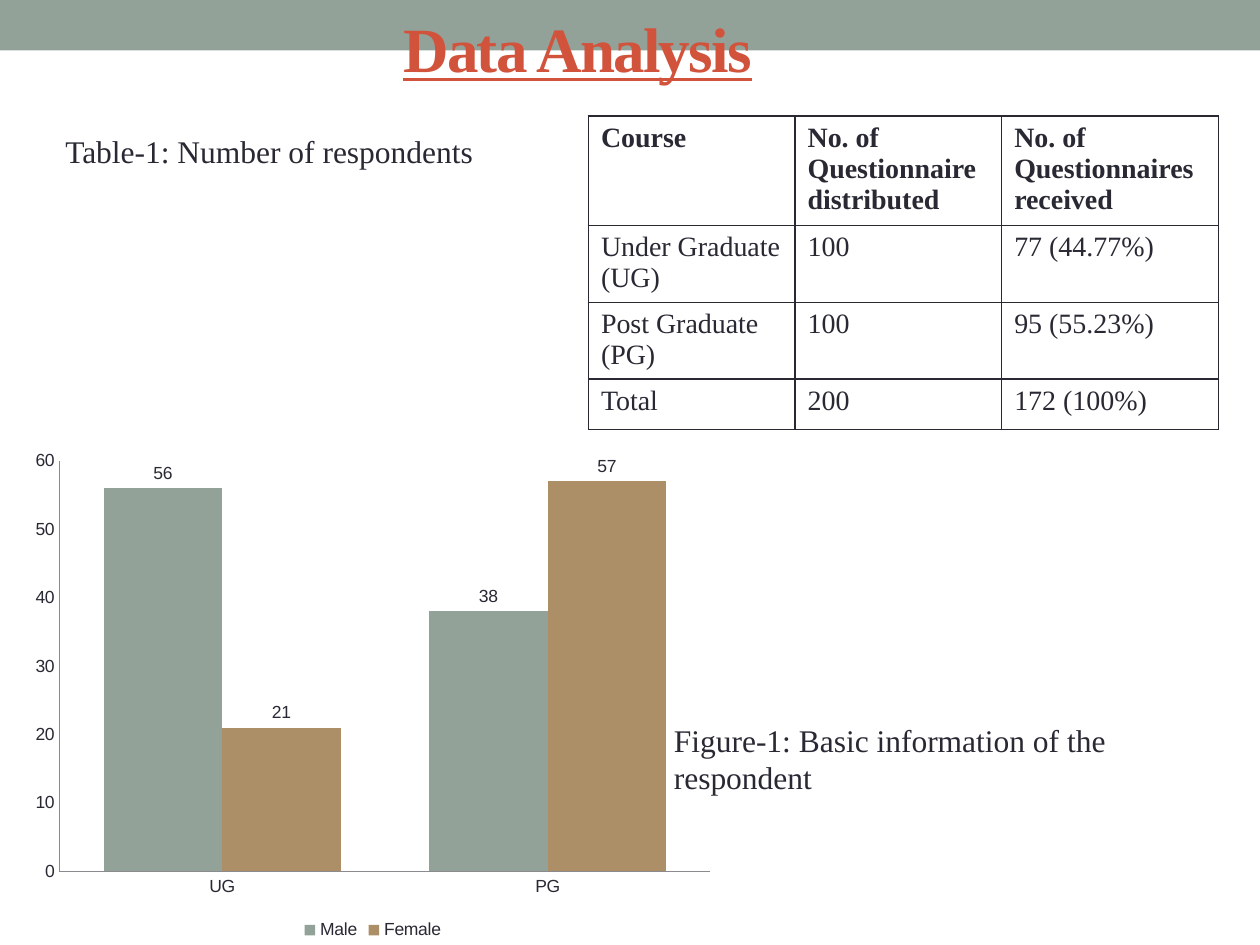
from lxml.etree import SubElement
from pptx import Presentation
from pptx.chart.data import CategoryChartData
from pptx.dml.color import RGBColor
from pptx.enum.chart import XL_CHART_TYPE as ChartType, XL_LABEL_POSITION as LabelPosition
from pptx.enum.chart import XL_LEGEND_POSITION as LegendPosition, XL_TICK_MARK as TickMark
from pptx.enum.shapes import MSO_SHAPE as Shape
from pptx.enum.text import MSO_ANCHOR as Anchor, MSO_AUTO_SIZE as AutoSize, PP_ALIGN as Align
from pptx.oxml.ns import qn
from pptx.util import Inches, Pt

INK, SAGE, TAN, RED, GRAY = "292934", "93A299", "AD8F67", "D2533C", "8A8A8F"


def color(value):
    return RGBColor.from_string(value)


def add_run(paragraph, text, size, ink=INK, bold=False):
    run = paragraph.add_run()
    run.text = text
    run.font.name = "Times New Roman"
    run.font.size = Pt(size)
    run.font.bold = bold
    run.font.color.rgb = color(ink)
    return run


presentation = Presentation()
presentation.slide_width = Inches(10)
presentation.slide_height = Inches(7.5)
slide = presentation.slides.add_slide(presentation.slide_layouts[5])

title = slide.shapes.title
title.left, title.top = Inches(0.5), Inches(0)
title.width, title.height = Inches(8.17), Inches(0.75)
title.text_frame.vertical_anchor = Anchor.MIDDLE
title.text_frame.auto_size = AutoSize.NONE
paragraph = title.text_frame.paragraphs[0]
paragraph.alignment = Align.CENTER
run = add_run(paragraph, "Data Analysis", 36, RED, True)
run.font.underline = True
run.font._element.set("spc", "-100")

band = slide.shapes.add_shape(Shape.RECTANGLE, Inches(0), Inches(0), Inches(10), Inches(0.4))
band.shadow.inherit = False
band.fill.solid()
band.fill.fore_color.rgb = color(SAGE)
band.line.fill.background()
title.element.addprevious(band.element)

rows = [
    ("Course", "No. of Questionnaire distributed", "No. of Questionnaires received"),
    ("Under Graduate (UG)", "100", "77 (44.77%)"),
    ("Post Graduate (PG)", "100", "95 (55.23%)"),
    ("Total", "200", "172 (100%)"),
]
table = slide.shapes.add_table(
    4, 3, Inches(4.67), Inches(0.92), Inches(5), Inches(2.49)).table
table.horz_banding = False
for column, width in zip(table.columns, (1.64, 1.64, 1.72)):
    column.width = Inches(width)
for row, height in zip(table.rows, (0.87, 0.61, 0.61, 0.4)):
    row.height = Inches(height)
for row_index, texts in enumerate(rows):
    for column_index, text in enumerate(texts):
        cell = table.cell(row_index, column_index)
        add_run(cell.text_frame.paragraphs[0], text, 16, bold=row_index == 0)
        properties = cell._tc.get_or_add_tcPr()
        for side in ("a:lnL", "a:lnR", "a:lnT", "a:lnB"):
            border = SubElement(properties, qn(side), w=str(Pt(1)))
            fill = SubElement(border, qn("a:solidFill"))
            SubElement(fill, qn("a:srgbClr"), val=INK)
        cell.fill.background()

captions = [
    ("Table-1: Number of respondents", 0.42, 1, 4, 0.4),
    ("Figure-1: Basic information of the respondent", 5.25, 5.67, 4.5, 0.71),
]

chart_data = CategoryChartData()
chart_data.categories = ["UG", "PG"]
chart_data.add_series("Male", (56, 38))
chart_data.add_series("Female", (21, 57))
chart = slide.shapes.add_chart(
    ChartType.COLUMN_CLUSTERED, Inches(0.17), Inches(3.5), Inches(5.58), Inches(4), chart_data).chart
chart.has_title = False
chart.font.name = "Arial"
chart.font.size = Pt(10)
chart.font.color.rgb = color(INK)
chart.has_legend = True
chart.legend.position = LegendPosition.BOTTOM
chart.legend.include_in_layout = False
for axis in (chart.category_axis, chart.value_axis):
    axis.major_tick_mark = TickMark.NONE
    axis.minor_tick_mark = TickMark.NONE
    axis.has_major_gridlines = False
    axis.format.line.color.rgb = color(GRAY)
chart.value_axis.minimum_scale = 0
chart.value_axis.maximum_scale = 60
chart.value_axis.major_unit = 10
plot = chart.plots[0]
plot.gap_width = 75
plot.overlap = 0
plot.vary_by_categories = False
for series, fill_color in zip(plot.series, (SAGE, TAN)):
    series.format.fill.solid()
    series.format.fill.fore_color.rgb = color(fill_color)
    series.data_labels.show_value = True
    series.data_labels.position = LabelPosition.OUTSIDE_END

for text, left, top, width, height in captions:
    caption = slide.shapes.add_textbox(Inches(left), Inches(top), Inches(width), Inches(height))
    caption.text_frame.word_wrap = True
    caption.text_frame.auto_size = AutoSize.SHAPE_TO_FIT_TEXT
    add_run(caption.text_frame.paragraphs[0], text, 18)

presentation.save("out.pptx")
